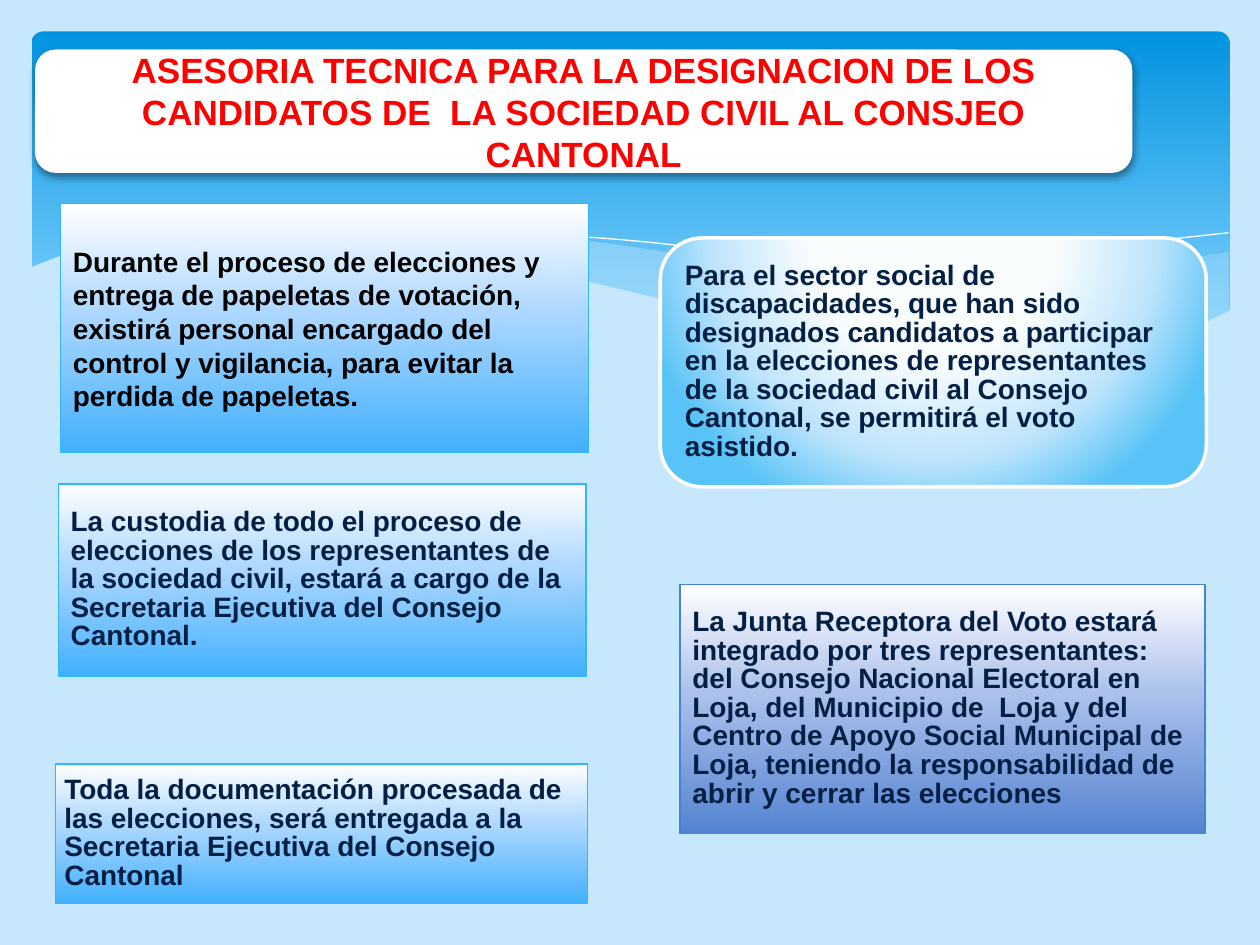
from lxml.etree import SubElement
from pptx import Presentation
from pptx.dml.color import RGBColor
from pptx.enum.shapes import MSO_SHAPE
from pptx.enum.text import MSO_ANCHOR, PP_ALIGN
from pptx.oxml.ns import qn
from pptx.util import Pt

SKY, WHITE, NAVY = "C6E7FC", "FFFFFF", "041F44"
AZURE = [(0, WHITE), (44, "ACD7FF"), (100, "42B0FD")]
INDIGO = [(0, WHITE), (44, "ABC0EB"), (100, "5484D1")]
GLOW = [(40, "FAFDFE"), (74, "BEE4FC"), (100, "58C3F6")]
BANNER = [(0, "0293E0"), (90, "83D3FE")]

RIGHT_TOP = [(702, 144), (662, 151), (620, 161), (561, 174), (508, 185), (476, 191)]
RIGHT_BOTTOM = [(476, 191), (518, 195.5), (562, 199.4), (601, 199.6), (640, 197),
                (673, 190), (702, 178)]
MIDDLE_TOP = [(206, 137.5), (247, 133.5), (302, 134.5), (361, 141), (420, 152),
              (508, 173), (580, 187), (643, 196.5)]
MIDDLE_BOTTOM = [(643, 196.5), (596, 200), (538, 198), (479, 191.5), (408, 178.5),
                 (323, 160), (275, 149), (233, 141), (206, 137.5)]
LEFT_STREAK = [(222, 140), (261, 136), (312, 134.6), (366, 138), (438, 147),
               (523, 163), (598, 181), (653, 196)]
RIGHT_STREAK = [(441, 185), (500, 170), (580, 151), (634, 141), (702, 133)]
FRONT_TOP = [(17, 153), (43, 143.5), (76, 136), (116, 132.5), (166, 134), (228, 142),
             (322, 158), (417, 180), (486, 191.5), (562, 198.5), (621, 198),
             (670, 191), (704, 177)]
FRONT_BASE = [(704, 237), (17, 237)]

TITLE = ("ASESORIA TECNICA PARA LA DESIGNACION DE LOS CANDIDATOS DE  LA SOCIEDAD "
         "CIVIL AL CONSJEO CANTONAL")
# text, position and size, shape, gradient, line, other formats
PANELS = [
    ("Toda la documentación procesada de las elecciones, será entregada a la "
     "Secretaria Ejecutiva del Consejo Cantonal",
     (31.8, 436.5, 303.8, 79.8), MSO_SHAPE.RECTANGLE, AZURE, "31B6FD", {"inset": 5}),
    ("Durante el proceso de elecciones y entrega de papeletas de votación, existirá "
     "personal encargado del control y vigilancia, para evitar la perdida de papeletas.",
     (34.6, 116.5, 301.6, 142.2), MSO_SHAPE.RECTANGLE, AZURE, "31B6FD",
     {"color": "000000", "spacing": 1.0}),
    ("La custodia de todo el proceso de elecciones de los representantes de la sociedad "
     "civil, estará a cargo de la Secretaria Ejecutiva del Consejo Cantonal.",
     (33.3, 276.5, 301.6, 110), MSO_SHAPE.RECTANGLE, AZURE, "31B6FD", {}),
    ("La Junta Receptora del Voto estará integrado por tres representantes: del Consejo "
     "Nacional Electoral en Loja, del Municipio de  Loja y del Centro de Apoyo Social "
     "Municipal de Loja, teniendo la responsabilidad de abrir y cerrar las elecciones",
     (388.6, 334, 300, 142.2), MSO_SHAPE.RECTANGLE, INDIGO, "4584D3", {}),
    ("Para el sector social de discapacidades, que han sido designados candidatos a "
     "participar en la elecciones de representantes de la sociedad civil al Consejo "
     "Cantonal, se permitirá el voto asistido.",
     (377.3, 136, 312, 142.2), MSO_SHAPE.ROUNDED_RECTANGLE, GLOW, WHITE,
     {"line_width": 2, "radial": True}),
]


def paint(fill, color):
    fill.solid()
    fill.fore_color.rgb = RGBColor.from_string(color)


def add_color(parent, color, opacity=100):
    node = SubElement(parent, qn("a:srgbClr"), val=color)
    if opacity < 100:
        SubElement(node, qn("a:alpha"), val=str(opacity * 1000))


def paint_gradient(shape, stops, radial=False):
    """Fill with any number of (percent, colour) stops, downwards or from a centre."""
    shape.fill.gradient()
    gradient = shape._element.spPr.find(qn("a:gradFill"))
    for child in list(gradient):
        gradient.remove(child)
    stop_list = SubElement(gradient, qn("a:gsLst"))
    for percent, color in stops:
        add_color(SubElement(stop_list, qn("a:gs"), pos=str(percent * 1000)), color)
    if radial:
        circle = SubElement(gradient, qn("a:path"), {"path": "circle"})
        SubElement(circle, qn("a:fillToRect"), l="20000", t="-40000", r="20000", b="140000")
    else:
        SubElement(gradient, qn("a:lin"), ang="5400000", scaled="0")


def set_line(shape, color=None, width=0.75):
    if color:
        paint(shape.line.fill, color)
        shape.line.width = Pt(width)
    else:
        shape.line.fill.background()


def add_box(page, kind, place, line=None, line_width=0.75):
    box = page.shapes.add_shape(kind, *map(Pt, place))
    box.shadow.inherit = False
    set_line(box, line, line_width)
    return box


def write_text(box, text, size=16, color=NAVY, spacing=0.85, align=PP_ALIGN.LEFT, inset=None):
    frame = box.text_frame
    formats = {"word_wrap": True, "vertical_anchor": MSO_ANCHOR.MIDDLE}
    if inset is not None:
        formats |= {f"margin_{side}": Pt(inset) for side in ("left", "top", "right", "bottom")}
    for name, value in formats.items():
        setattr(frame, name, value)
    para = frame.paragraphs[0]
    para.alignment, para.line_spacing = align, spacing
    span = para.add_run()
    span.text = text
    for name, value in {"name": "Arial", "size": Pt(size), "bold": True}.items():
        setattr(span.font, name, value)
    span.font.color.rgb = RGBColor.from_string(color)


def smooth(points, steps=5):
    """Return a Catmull-Rom curve through the points."""
    padded = [points[0], *points, points[-1]]
    curve = [points[0]]
    for quad in zip(padded, padded[1:], padded[2:], padded[3:]):
        for step in range(1, steps + 1):
            t = step / steps
            curve.append(tuple(
                b + 0.5 * t * (c - a + t * (2 * a - 5 * b + 4 * c - d
                                           + t * (3 * (b - c) + d - a)))
                for a, b, c, d in zip(*quad)))
    return curve


def add_freeform(page, points, closed):
    start, *others = [(Pt(x), Pt(y)) for x, y in points]
    builder = page.shapes.build_freeform(*start)
    builder.add_line_segments(others, close=closed)
    shape = builder.convert_to_shape()
    shape.shadow.inherit = False
    return shape


def add_wave(page, points, opacity=100):
    wave = add_freeform(page, points, True)
    paint(wave.fill, SKY)
    set_line(wave)
    if opacity < 100:
        color = wave._element.spPr.find(qn("a:solidFill"))[0]
        SubElement(color, qn("a:alpha"), val=str(opacity * 1000))


def add_streak(page, points):
    streak = add_freeform(page, smooth(points), False)
    streak.fill.background()
    set_line(streak, WHITE, 0)


def add_backdrop(page):
    paint(page.background.fill, SKY)
    banner = add_box(page, MSO_SHAPE.ROUNDED_RECTANGLE, (18, 18, 684.7, 194.4))
    banner.adjustments[0] = 0.034
    paint_gradient(banner, BANNER)
    add_wave(page, smooth(RIGHT_TOP) + smooth(RIGHT_BOTTOM), 29)
    add_wave(page, smooth(MIDDLE_TOP) + smooth(MIDDLE_BOTTOM), 40)
    add_streak(page, LEFT_STREAK)
    add_streak(page, RIGHT_STREAK)
    add_wave(page, smooth(FRONT_TOP) + FRONT_BASE)


def add_title(page):
    box = add_box(page, MSO_SHAPE.ROUNDED_RECTANGLE, (20, 28.3, 627, 70.5))
    paint(box.fill, WHITE)
    effects = box._element.spPr.find(qn("a:effectLst"))
    shadow = SubElement(effects, qn("a:outerShdw"), blurRad=str(Pt(4)), dist=str(Pt(2)),
                        dir="5400000", rotWithShape="0")
    add_color(shadow, "000000", 38)
    write_text(box, TITLE, size=20, color="FF0000", spacing=1.0, align=PP_ALIGN.CENTER)


def add_panel(page, text, place, kind, stops, line, line_width=0.75, radial=False, **formats):
    box = add_box(page, kind, place, line, line_width)
    paint_gradient(box, stops, radial)
    write_text(box, text, **formats)


def main():
    deck = Presentation()
    deck.slide_width, deck.slide_height = Pt(720), Pt(540)
    page = deck.slides.add_slide(deck.slide_layouts[6])
    add_backdrop(page)
    add_title(page)
    for *panel, formats in PANELS:
        add_panel(page, *panel, **formats)
    deck.save("out.pptx")


if __name__ == "__main__":
    main()
